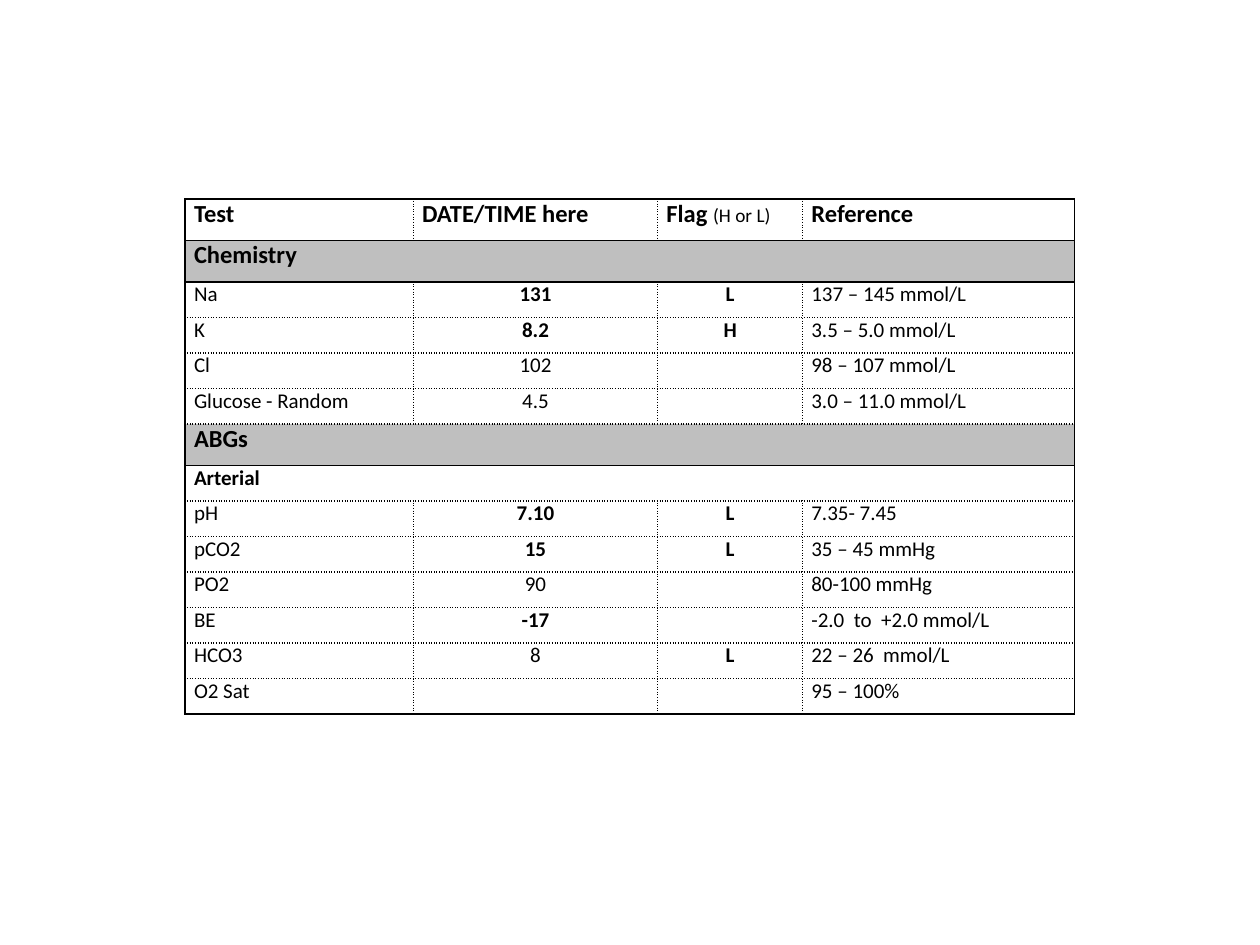
from dataclasses import dataclass

from lxml.etree import SubElement
from pptx import Presentation
from pptx.dml.color import RGBColor
from pptx.enum.text import PP_ALIGN
from pptx.oxml.ns import qn
from pptx.util import Inches, Pt


@dataclass(frozen=True)
class Theme:
    font: str = "Calibri"
    ink: str = "000000"
    paper: str = "FFFFFF"
    band: str = "BFBFBF"
    heading: int = 14
    body: int = 12
    note: int = 11
    line: int = 1


THEME = Theme()

ROWS = [
    ("header", ["Test", "DATE/TIME here", "Flag (H or L)", "Reference"]),
    ("section", ["Chemistry"]),
    ("result", ["Na", "131", "L", "137 – 145 mmol/L"]),
    ("result", ["K", "8.2", "H", "3.5 – 5.0 mmol/L"]),
    ("result", ["Cl", "102", "", "98 – 107 mmol/L"]),
    ("result", ["Glucose - Random", "4.5", "", "3.0 – 11.0 mmol/L"]),
    ("section", ["ABGs"]),
    ("group", ["Arterial"]),
    ("result", ["pH", "7.10", "L", "7.35- 7.45"]),
    ("result", ["pCO2", "15", "L", "35 – 45 mmHg"]),
    ("result", ["PO2", "90", "", "80-100 mmHg"]),
    ("result", ["BE", "-17", "", "-2.0  to  +2.0 mmol/L"]),
    ("result", ["HCO3", "8", "L", "22 – 26  mmol/L"]),
    ("result", ["O2 Sat", "", "", "95 – 100%"]),
]
EMPHASISED = {"Na", "K", "pH", "pCO2", "BE"}
HEADINGS = ("header", "section")
FULL_WIDTH = ("section", "group")
VALUE, FLAG = 1, 2
HEADER_NOTE = "(H or L)"

SLIDE_WIDTH, SLIDE_HEIGHT = 10, 7.5
LEFT, TOP, TABLE_HEIGHT = 1.47, 1.58, 4.09
COLUMN_WIDTHS = [1.81, 1.94, 1.15, 2.16]
HEADING_SHARE, BODY_SHARE = 7, 6


def draw_border(cell, side, style):
    properties = cell._tc.get_or_add_tcPr()
    line = SubElement(properties, qn(f"a:ln{side}"), w=str(Pt(THEME.line)))
    if style is None:
        SubElement(line, qn("a:noFill"))
        return
    fill = SubElement(line, qn("a:solidFill"))
    SubElement(fill, qn("a:srgbClr"), val=THEME.ink)
    SubElement(line, qn("a:prstDash"), val=style)


def border_styles(row, column):
    kind = ROWS[row][0]
    last_column = len(COLUMN_WIDTHS) - 1
    merged = kind in FULL_WIDTH
    inner = None if merged else "dot"
    solid_top = row == 0 or ROWS[row - 1][0] in HEADINGS
    solid_bottom = row == len(ROWS) - 1 or kind in HEADINGS
    solid_right = column == last_column or (merged and column == 0)
    return {
        "L": "solid" if column == 0 else inner,
        "R": "solid" if solid_right else inner,
        "T": "solid" if solid_top else "dot",
        "B": "solid" if solid_bottom else "dot",
    }


def write_text(cell, text, size, bold):
    para = cell.text_frame.paragraphs[0]
    if not text:
        SubElement(para._p, qn("a:endParaRPr"), sz=str(size * 100))
        return para
    main, note, _ = text.partition(HEADER_NOTE)
    for words, points, weight in ((main, size, bold), (note, THEME.note, False)):
        if words:
            span = para.add_run()
            span.text = words
            span.font.name = THEME.font
            span.font.size = Pt(points)
            span.font.bold = weight
            span.font.color.rgb = RGBColor.from_string(THEME.ink)
    return para


def format_cell(cell, row, column):
    kind, texts = ROWS[row]
    text = texts[column] if column < len(texts) else ""
    cell.margin_left = cell.margin_right = Inches(0.07)
    cell.margin_top = cell.margin_bottom = 0
    bold = (
        kind != "result"
        or column == FLAG
        or (column == VALUE and texts[0] in EMPHASISED)
    )
    size = THEME.heading if kind in HEADINGS else THEME.body
    para = write_text(cell, text, size, bold)
    if kind == "result" and column in (VALUE, FLAG):
        para.alignment = PP_ALIGN.CENTER
    for side, style in border_styles(row, column).items():
        draw_border(cell, side, style)
    if kind in HEADINGS:
        cell.fill.solid()
        color = THEME.band if kind == "section" else THEME.paper
        cell.fill.fore_color.rgb = RGBColor.from_string(color)
    else:
        cell.fill.background()


def build_results_table(page):
    shares = [HEADING_SHARE if kind in HEADINGS else BODY_SHARE for kind, _ in ROWS]
    table = page.shapes.add_table(
        len(ROWS), len(COLUMN_WIDTHS), Inches(LEFT), Inches(TOP),
        Inches(sum(COLUMN_WIDTHS)), Inches(TABLE_HEIGHT),
    ).table
    table.horz_banding = False
    for column, width in zip(table.columns, COLUMN_WIDTHS):
        column.width = Inches(width)
    for row, (kind, _) in enumerate(ROWS):
        table.rows[row].height = Inches(TABLE_HEIGHT * shares[row] / sum(shares))
        if kind in FULL_WIDTH:
            table.cell(row, 0).merge(table.cell(row, len(COLUMN_WIDTHS) - 1))
        for column in range(len(COLUMN_WIDTHS)):
            format_cell(table.cell(row, column), row, column)


def main():
    deck = Presentation()
    deck.slide_width, deck.slide_height = Inches(SLIDE_WIDTH), Inches(SLIDE_HEIGHT)
    page = deck.slides.add_slide(deck.slide_layouts[6])
    build_results_table(page)
    deck.save("out.pptx")


if __name__ == "__main__":
    main()
